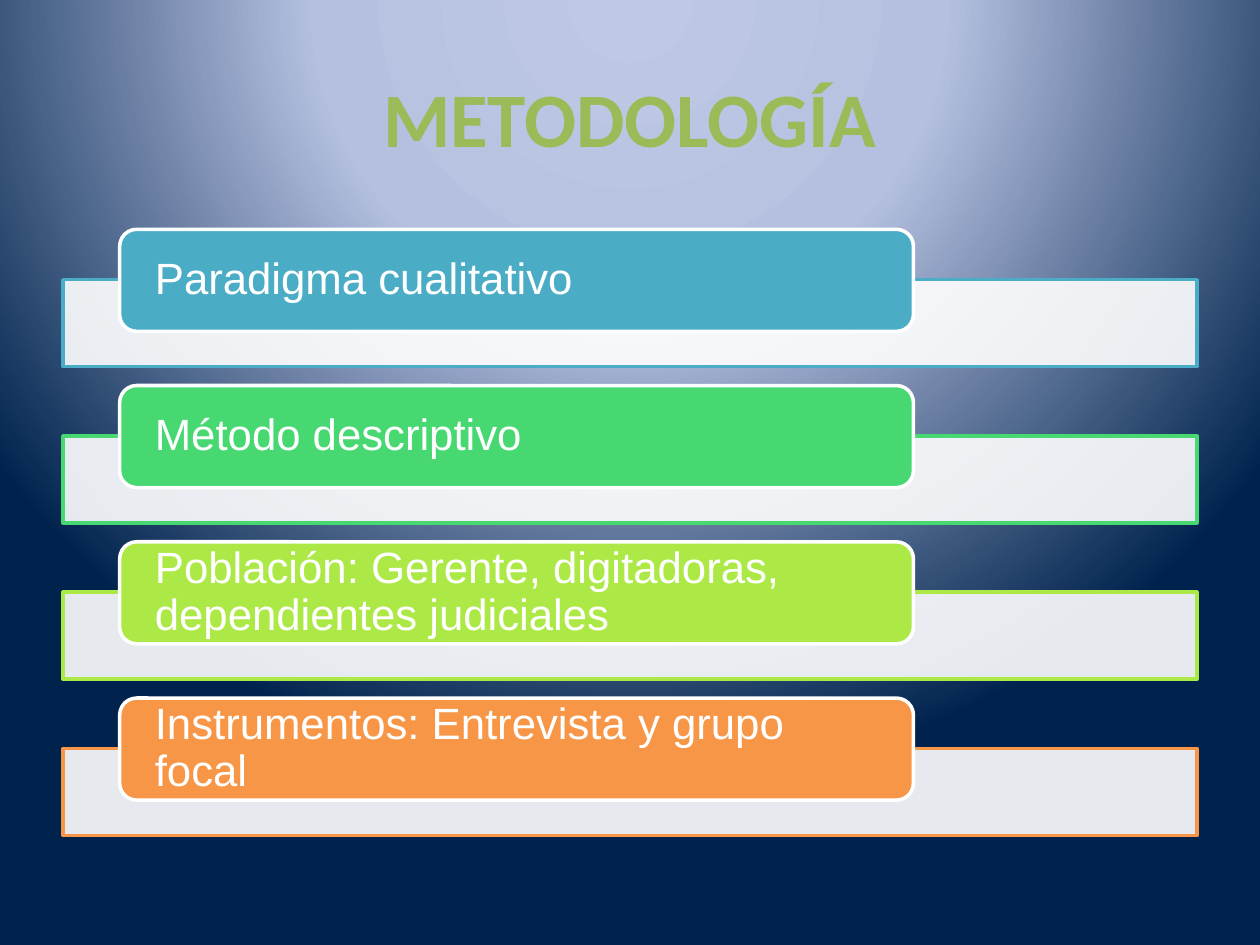
from dataclasses import dataclass

import pptx
import pptx.dml.color
import pptx.enum.shapes
import pptx.enum.text
import pptx.oxml
import pptx.oxml.ns
import pptx.util
from pptx.dml.color import RGBColor
from pptx.util import Inches

WHITE = RGBColor(0xFF, 0xFF, 0xFF)
OLIVE = RGBColor(0x9B, 0xBB, 0x59)
TEAL = RGBColor(0x4B, 0xAC, 0xC6)
GREEN = RGBColor(0x47, 0xD8, 0x72)
LIME = RGBColor(0xAC, 0xE9, 0x46)
ORANGE = RGBColor(0xF7, 0x96, 0x46)
SKY = RGBColor(0xBF, 0xC9, 0xE5)
HAZE = RGBColor(0xB5, 0xC0, 0xE0)
NAVY = RGBColor(0x00, 0x23, 0x4D)

SHAPE = pptx.enum.shapes.MSO_SHAPE
ALIGN = pptx.enum.text.PP_ALIGN
FIRST_TOP, ROW_PITCH = 1.82, 1.24


@dataclass
class Topic:
    text: str
    color: RGBColor


TOPICS = [
    Topic("Paradigma cualitativo", TEAL),
    Topic("Método descriptivo", GREEN),
    Topic("Población: Gerente, digitadoras, dependientes judiciales", LIME),
    Topic("Instrumentos: Entrevista y grupo focal", ORANGE),
]


def set_background(s) -> None:
    """Radial gradient centred above the slide."""
    stops = "".join(
        f'<a:gs pos="{pos * 1000}"><a:srgbClr val="{color}"/></a:gs>'
        for pos, color in ((0, SKY), (40, HAZE), (100, NAVY))
    )
    s.background.fill.solid()
    bg = s.element.find(".//" + pptx.oxml.ns.qn("p:bgPr"))
    bg.replace(bg[0], pptx.oxml.parse_xml(
        f'<a:gradFill {pptx.oxml.ns.nsdecls("a")} rotWithShape="1">'
        f'<a:gsLst>{stops}</a:gsLst><a:path path="circle">'
        '<a:fillToRect l="50000" t="-80000" r="50000" b="180000"/>'
        '</a:path></a:gradFill>'))


def write_text(sp, text: str, *, font: str, size: float, color: RGBColor,
               bold: bool = False, align=ALIGN.LEFT, spacing: float = 1.0,
               inset: float = 0.1) -> None:
    tf = sp.text_frame
    tf.word_wrap = True
    tf.vertical_anchor = pptx.enum.text.MSO_ANCHOR.MIDDLE
    tf.margin_left = tf.margin_right = Inches(inset)
    tf.margin_top = tf.margin_bottom = 0
    p = tf.paragraphs[0]
    p.alignment, p.line_spacing = align, spacing
    r = p.add_run()
    r.text = text
    r.font.name, r.font.size, r.font.bold = font, pptx.util.Pt(size), bold
    r.font.color.rgb = color


def add_box(s, kind, left: float, top: float, width: float, height: float,
            fill: RGBColor, line: RGBColor):
    sp = s.shapes.add_shape(kind, Inches(left), Inches(top),
                            Inches(width), Inches(height))
    sp.shadow.inherit = False
    sp.fill.solid()
    sp.fill.fore_color.rgb = fill
    sp.line.color.rgb = line
    sp.line.width = pptx.util.Pt(2)
    return sp


def set_opacity(sp, percent: int) -> None:
    color = sp.element.spPr.find(
        pptx.oxml.ns.qn("a:solidFill") + "/" + pptx.oxml.ns.qn("a:srgbClr"))
    color.append(pptx.oxml.parse_xml(
        f'<a:alpha {pptx.oxml.ns.nsdecls("a")} val="{percent * 1000}"/>'))


def add_topic(s, topic: Topic, top: float) -> None:
    bar = add_box(s, SHAPE.RECTANGLE, 0.5, top + 0.4, 9, 0.69, WHITE, topic.color)
    set_opacity(bar, 90)
    label = add_box(s, SHAPE.ROUNDED_RECTANGLE, 0.95, top, 6.3, 0.81,
                    topic.color, WHITE)
    write_text(label, topic.text, font="Arial", size=25, color=WHITE,
               spacing=0.9, inset=0.24)


def main() -> None:
    prs = pptx.Presentation()
    prs.slide_width, prs.slide_height = Inches(10), Inches(7.5)
    s = prs.slides.add_slide(prs.slide_layouts[6])
    set_background(s)

    # Title
    title = s.shapes.add_textbox(Inches(0.5), Inches(0.3), Inches(9), Inches(1.25))
    write_text(title, "METODOLOGÍA", font="Calibri", size=44, color=OLIVE,
               bold=True, align=ALIGN.CENTER)

    # Stacked topics
    for i, topic in enumerate(TOPICS):
        add_topic(s, topic, FIRST_TOP + i * ROW_PITCH)

    prs.save("out.pptx")


if __name__ == "__main__":
    main()
